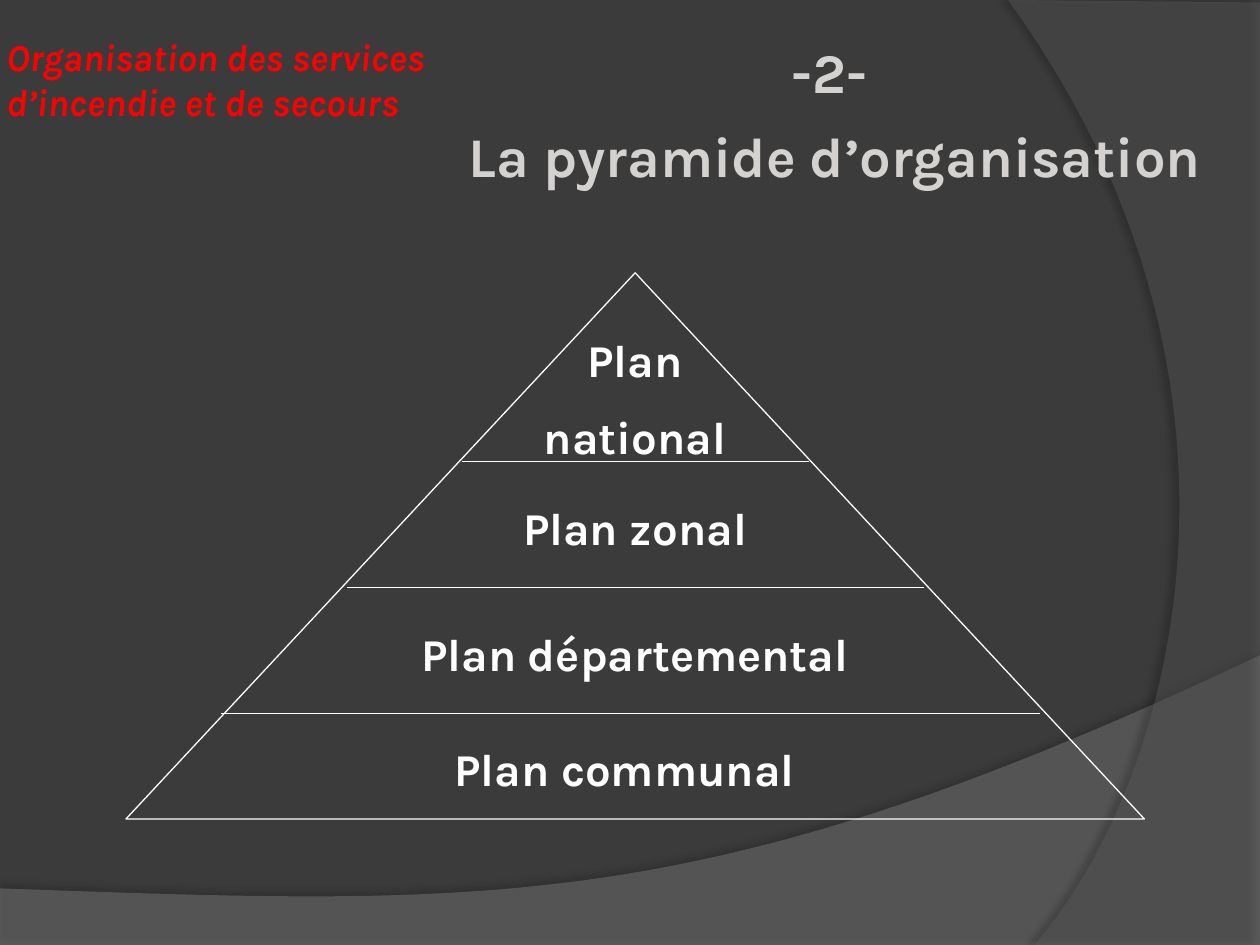
from dataclasses import dataclass

from lxml import etree
from pptx import Presentation
from pptx import util as u
from pptx.dml import color as clr
from pptx.enum import shapes, text
from pptx.oxml import ns


@dataclass(frozen=True)
class Theme:
    font: str = "Karla"
    back: str = "3B3B3B"
    band: str = "7F7F7F"
    side: str = "5E5E5E"
    red: str = "FF0000"
    pale: str = "D4D2D0"
    white: str = "FFFFFF"
    small: float = 21.6
    plan: float = 26
    head: float = 32
    line: float = 0.75


THEME = Theme()


def rgb(code):
    return clr.RGBColor.from_string(code)


def add_node(parent, tag, **attrs):
    node = etree.SubElement(parent, ns.qn(tag))
    for key, value in attrs.items():
        node.set(key, str(value))
    return node


def curve(start, ctrl1, ctrl2, end, steps=48):
    """Points along a cubic curve, in cm."""
    points = []
    for i in range(steps + 1):
        t = i / steps
        parts = ((1 - t) ** 3, 3 * t * (1 - t) ** 2, 3 * t * t * (1 - t), t ** 3)
        pairs = list(zip(parts, (start, ctrl1, ctrl2, end)))
        points.append(tuple(sum(w * p[axis] for w, p in pairs) for axis in (0, 1)))
    return points


def add_wave(slide, points, fill, alpha, shade):
    """Translucent outline with a soft outer shadow."""
    spots = [(u.Cm(x), u.Cm(y)) for x, y in points]
    form = slide.shapes.build_freeform(*spots[0])
    form.add_line_segments(spots[1:], close=True)
    wave = form.convert_to_shape()
    wave.fill.solid()
    wave.fill.fore_color.rgb = rgb(fill)
    wave.line.fill.background()
    tone = wave._element.spPr.find(ns.qn("a:solidFill"))[0]
    add_node(tone, "a:alpha", val=alpha * 1000)
    dark, dist, angle = shade
    wave.shadow.inherit = False
    glow = wave._element.spPr.find(ns.qn("a:effectLst"))
    cast = add_node(glow, "a:outerShdw", blurRad=u.Pt(4), dist=u.Pt(dist),
                    dir=angle * 60000, algn="ctr", rotWithShape=0)
    ink = add_node(cast, "a:srgbClr", val="000000")
    add_node(ink, "a:alpha", val=dark * 1000)


def add_label(slide, box, lines, size, tint, frame=None, italic=False, align="CENTER"):
    label = slide.shapes.add_textbox(*map(u.Cm, box)).text_frame
    for key, value in {"word_wrap": True, **(frame or {})}.items():
        setattr(label, key, value)
    style = {"name": THEME.font, "size": u.Pt(size), "bold": True, "italic": italic}
    for i, words in enumerate(lines):
        para = label.add_paragraph() if i else label.paragraphs[0]
        para.alignment = text.PP_ALIGN[align]
        if i:
            para.space_before = u.Pt(size / 2)
        run = para.add_run()
        run.text = words
        for key, value in style.items():
            setattr(run.font, key, value)
        run.font.color.rgb = rgb(tint)


def set_line(shape):
    shape.line.color.rgb = rgb(THEME.white)
    shape.line.width = u.Pt(THEME.line)


def add_peak(slide, box):
    kind = shapes.MSO_SHAPE.ISOSCELES_TRIANGLE
    peak = slide.shapes.add_shape(kind, *map(u.Cm, box))
    peak.shadow.inherit = False
    peak.fill.background()
    set_line(peak)


def add_rule(slide, left, right, y):
    kind = shapes.MSO_CONNECTOR.STRAIGHT
    rule = slide.shapes.add_connector(kind, *map(u.Cm, (left, y, right, y)))
    set_line(rule)
    add_node(rule._element.spPr, "a:effectLst")


def main():
    deck = Presentation()
    deck.slide_width, deck.slide_height = u.Cm(25.4), u.Cm(19.05)
    slide = deck.slides.add_slide(deck.slide_layouts[6])

    # Backdrop
    slide.background.fill.solid()
    slide.background.fill.fore_color.rgb = rgb(THEME.back)
    low = curve((25.4, 13.21), (14.2, 18.52), (9.93, 18.26), (0, 17.91))
    add_wave(slide, [(0, 19.08), (25.4, 19.08)] + low, THEME.band, 45, (35, 3.5, 270))
    edge = curve((20.85, 19.05), (23.75, 15.72), (25.86, 7.62), (20.32, 0))
    add_wave(slide, [(25.4, 0.05), (25.4, 19.05)] + edge, THEME.side, 40, (45, 4, 180))

    # Headings
    sides = ("left", "right", "top", "bottom")
    frame = {f"margin_{side}": u.Cm(0.13) for side in sides}
    frame["vertical_anchor"] = text.MSO_ANCHOR.MIDDLE
    add_label(slide, (0, 0, 9.53, 3.18),
              ["Organisation des services d’incendie et de secours"],
              THEME.small, THEME.red, frame, italic=True, align="LEFT")
    for words, box in (
        ("La pyramide d’organisation", (8.26, 2.33, 17.15, 1.6)),
        ("-2-", (9.31, 0.64, 14.82, 1.6)),
    ):
        add_label(slide, box, [words], THEME.head, THEME.pale)

    # Pyramid and its levels
    add_peak(slide, (2.54, 5.5, 20.53, 11.01))
    for lines, box in (
        (["Plan", "national"], (9.31, 6.56, 6.99, 3.02)),
        (["Plan zonal"], (9.31, 9.95, 6.99, 1.35)),
        (["Plan départemental"], (7.62, 12.49, 10.37, 1.35)),
        (["Plan communal"], (8.68, 14.82, 7.83, 1.35)),
    ):
        add_label(slide, box, lines, THEME.plan, THEME.white)

    # Level borders, evenly spaced
    for i, (left, right) in enumerate(((9.31, 16.3), (6.99, 18.63), (4.45, 20.96))):
        add_rule(slide, left, right, 9.31 + 2.54 * i)

    deck.save("out.pptx")


if __name__ == "__main__":
    main()
